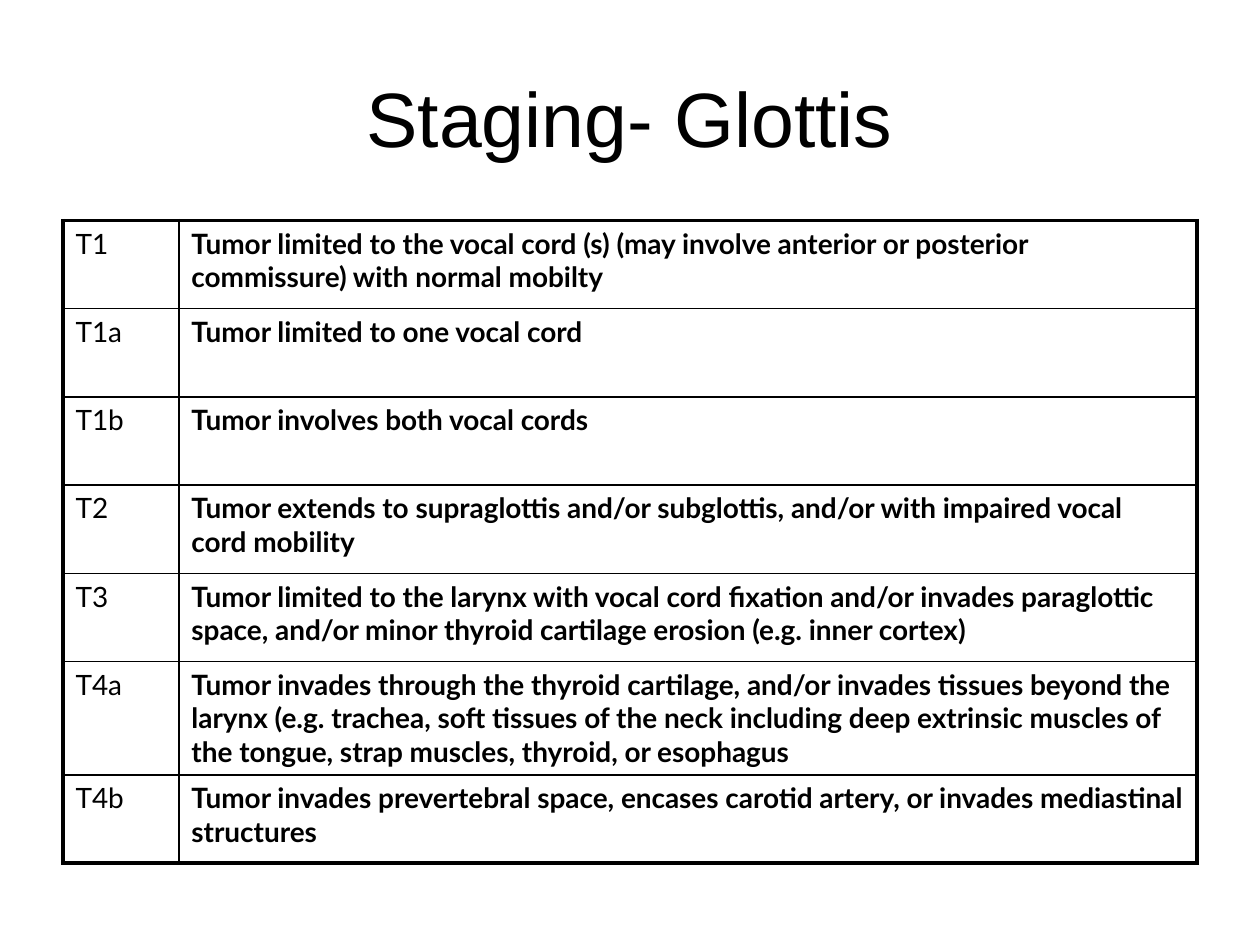
from pptx import Presentation
from pptx.dml.color import RGBColor
from pptx.enum.text import MSO_ANCHOR, PP_ALIGN
from pptx.oxml.ns import qn
from pptx.util import Inches, Pt
from lxml.etree import SubElement

BLACK = RGBColor(0, 0, 0)
WHITE = RGBColor(255, 255, 255)
THIN, THICK = Pt(1), Pt(2.25)

TITLE = "Staging- Glottis"
STAGES = [
    ("T1", "Tumor limited to the vocal cord (s) (may involve anterior or posterior "
           "commissure) with normal mobilty"),
    ("T1a", "Tumor limited to one vocal cord"),
    ("T1b", "Tumor involves both vocal cords"),
    ("T2", "Tumor extends to supraglottis and/or subglottis, and/or with impaired "
           "vocal cord mobility"),
    ("T3", "Tumor limited to the larynx with vocal cord fixation and/or invades "
           "paraglottic space, and/or minor thyroid cartilage erosion (e.g. inner cortex)"),
    ("T4a", "Tumor invades through the thyroid cartilage, and/or invades tissues beyond "
            "the larynx (e.g. trachea, soft tissues of the neck including deep extrinsic "
            "muscles of the tongue, strap muscles, thyroid, or esophagus"),
    ("T4b", "Tumor invades prevertebral space, encases carotid artery, or invades "
            "mediastinal structures"),
]
COLUMN_WIDTHS = (0.92, 8.08)
ROW_HEIGHT = 0.7


def style_font(font, name, size, bold=False):
    font.name, font.size, font.bold = name, Pt(size), bold
    font.color.rgb = BLACK


def set_borders(cell, widths):
    """Draw the cell's left, right, top and bottom lines in the given widths."""
    properties = cell._tc.get_or_add_tcPr()
    for index, (side, width) in enumerate(zip("LRTB", widths)):
        line = SubElement(properties, qn(f"a:ln{side}"), w=str(width))
        fill = SubElement(line, qn("a:solidFill"))
        SubElement(fill, qn("a:srgbClr"), val=str(BLACK))
        properties.insert(index, line)  # lines come before the cell fill


def space_before_percent(para, percent):
    spacing = SubElement(para._p.get_or_add_pPr(), qn("a:spcBef"))
    SubElement(spacing, qn("a:spcPct"), val=str(percent * 1000))


def add_title(page):
    box = page.shapes.add_textbox(Inches(0.5), Inches(0.3), Inches(9), Inches(1.25))
    frame = box.text_frame
    frame.word_wrap = True
    frame.vertical_anchor = MSO_ANCHOR.MIDDLE
    frame.text = TITLE
    para = frame.paragraphs[0]
    para.alignment = PP_ALIGN.CENTER
    style_font(para.runs[0].font, "Arial", 44)


def add_staging_table(page):
    last_row, last_column = len(STAGES) - 1, len(COLUMN_WIDTHS) - 1
    table = page.shapes.add_table(
        len(STAGES), len(COLUMN_WIDTHS), Inches(0.5), Inches(1.75),
        Inches(sum(COLUMN_WIDTHS)), Inches(ROW_HEIGHT * len(STAGES))).table
    table.first_row = table.horz_banding = False
    for column, width in zip(table.columns, COLUMN_WIDTHS):
        column.width = Inches(width)
    for r, stage in enumerate(STAGES):
        table.rows[r].height = Inches(ROW_HEIGHT)
        for c, text in enumerate(stage):
            cell = table.cell(r, c)
            cell.fill.solid()
            cell.fill.fore_color.rgb = WHITE
            cell.text_frame.text = text
            para = cell.text_frame.paragraphs[0]
            space_before_percent(para, 20)
            style_font(para.runs[0].font, "Lato", 16, bold=c == 1)
            on_edge = (c == 0, c == last_column, r == 0, r == last_row)
            set_borders(cell, [THICK if edge else THIN for edge in on_edge])


def main():
    deck = Presentation()
    deck.slide_width, deck.slide_height = Inches(10), Inches(7.5)
    page = deck.slides.add_slide(deck.slide_layouts[6])
    add_title(page)
    add_staging_table(page)
    deck.save("out.pptx")


if __name__ == "__main__":
    main()
